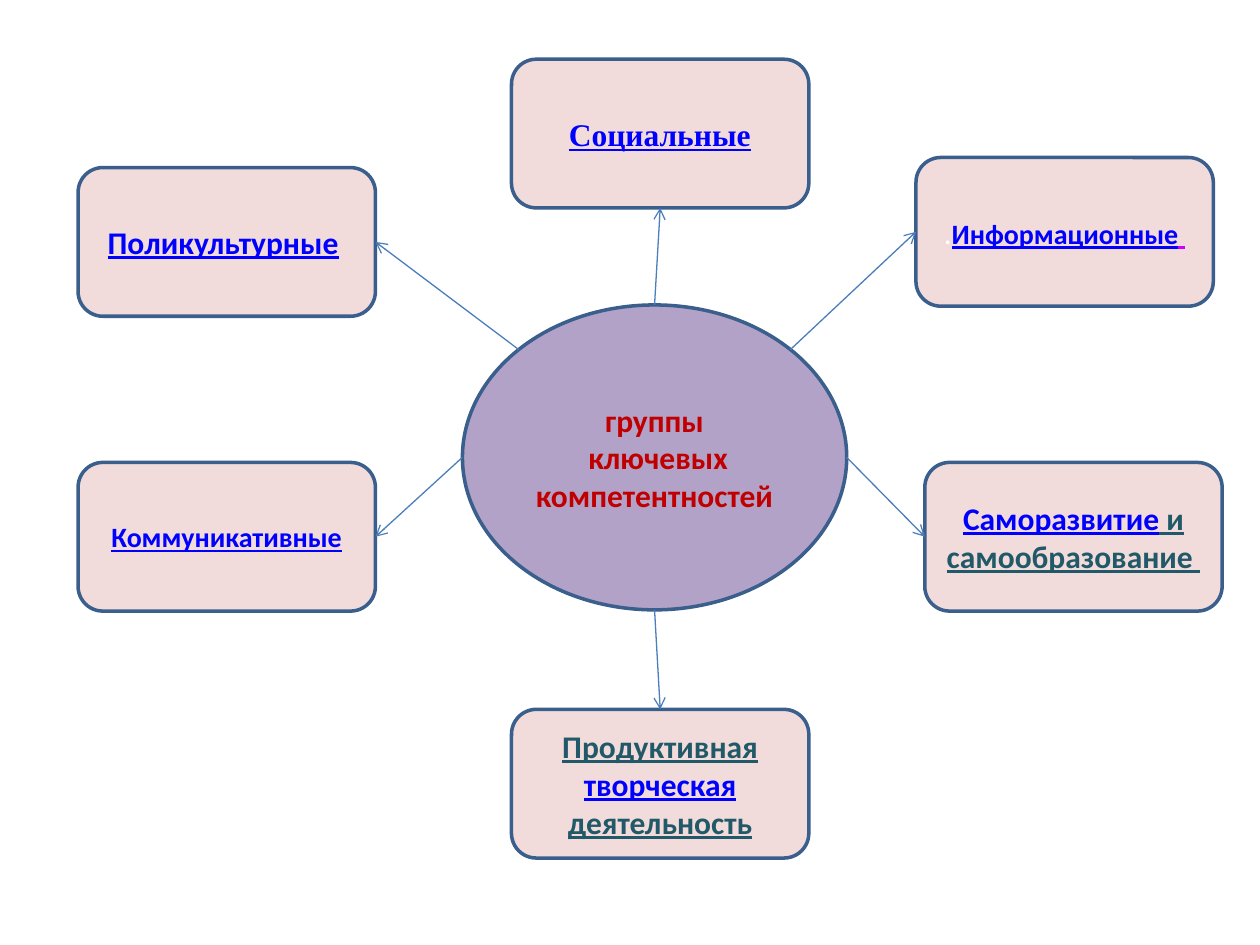
from dataclasses import dataclass
from math import cos, radians, sin

from lxml.etree import SubElement
from pptx import Presentation
from pptx.dml.color import RGBColor
from pptx.enum.shapes import MSO_CONNECTOR, MSO_SHAPE
from pptx.enum.text import MSO_ANCHOR, PP_ALIGN
from pptx.oxml.ns import qn
from pptx.util import Inches, Pt


@dataclass(frozen=True)
class Theme:
    hub_fill: str = "B3A2C7"
    box_fill: str = "F2DCDB"
    outline: str = "3A5F8C"
    arrow: str = "4B7EBC"
    red: str = "C00000"
    blue: str = "0000FF"
    teal: str = "215968"
    magenta: str = "CC00FF"
    white: str = "FFFFFF"
    font: str = "Calibri"
    serif: str = "Times New Roman"
    normal: int = 18
    small: int = 16


THEME = Theme()
BOX_WIDTH, BOX_HEIGHT = 2.36, 1.18
HUB = (3.67, 2.42, 3.05, 2.42)
TOP, LEFT, BOTTOM, RIGHT = range(4)


@dataclass(frozen=True)
class Words:
    text: str
    color: str = THEME.blue
    size: int = THEME.normal
    font: str = THEME.font
    bold: bool = True
    underline: bool = True


# Each group: left, top, joined side, angle on the hub (clockwise from right), paragraphs
GROUPS = [
    (4.06, 0.47, BOTTOM, 270, [[
        Words(" ", THEME.teal, bold=False, underline=False),
        Words("Социальные", font=THEME.serif),
        Words(" ", THEME.teal, font=THEME.serif, bold=False, underline=False)]]),
    (7.27, 1.25, LEFT, 315, [[
        Words(".", THEME.white, bold=False, underline=False),
        Words("Информационные", size=THEME.small),
        Words(" ", THEME.magenta, bold=False)]]),
    (7.34, 3.67, LEFT, 0, [[
        Words("Саморазвитие"), Words(" и самообразование ", THEME.teal)]]),
    (4.06, 5.63, TOP, 90, [
        [Words("Продуктивная ", THEME.teal), Words("творческая")],
        [Words("деятельность", THEME.teal)]]),
    (0.62, 3.67, RIGHT, 180, [[Words("Коммуникативные", size=THEME.small)]]),
    (0.62, 1.33, RIGHT, 225, [[
        Words("Поликультурные"), Words(" ", THEME.teal, underline=False)]]),
]


def add_label(page, preset, bounds, fill, paragraphs):
    """Place an outlined shape with centred text in the given bounds."""
    shape = page.shapes.add_shape(preset, *map(Inches, bounds))
    shape.shadow.inherit = False
    shape.fill.solid()
    shape.fill.fore_color.rgb = RGBColor.from_string(fill)
    shape.line.color.rgb = RGBColor.from_string(THEME.outline)
    shape.line.width = Pt(2)

    frame = shape.text_frame
    frame.word_wrap = True
    frame.vertical_anchor = MSO_ANCHOR.MIDDLE
    for index, pieces in enumerate(paragraphs):
        para = frame.add_paragraph() if index else frame.paragraphs[0]
        para.alignment = PP_ALIGN.CENTER
        for words in pieces:
            span = para.add_run()
            span.text = words.text
            span.font.name = words.font
            span.font.size = Pt(words.size)
            span.font.bold = words.bold
            span.font.underline = words.underline
            span.font.color.rgb = RGBColor.from_string(words.color)
    return shape


def add_arrow(page, hub_bounds, angle, box, side):
    """Draw an arrow from the rim of the hub to the middle of a box side."""
    left, top, width, height = hub_bounds
    start_x = Inches(left + width / 2 * (1 + cos(radians(angle))))
    start_y = Inches(top + height / 2 * (1 + sin(radians(angle))))
    arrow = page.shapes.add_connector(
        MSO_CONNECTOR.STRAIGHT, start_x, start_y, box.left, box.top)
    arrow.end_connect(box, side)
    arrow.line.color.rgb = RGBColor.from_string(THEME.arrow)
    arrow.line.width = Pt(0.75)
    SubElement(arrow.line._get_or_add_ln(), qn("a:tailEnd"), type="arrow")
    SubElement(arrow._element.spPr, qn("a:effectLst"))


def add_competence_map(page, hub_bounds):
    """Place the hub, the boxes around it and the arrows between them."""
    heading = [[Words(text, THEME.red, underline=False)]
               for text in ("группы", " ключевых компетентностей")]
    add_label(page, MSO_SHAPE.OVAL, hub_bounds, THEME.hub_fill, heading)

    for left, top, side, angle, paragraphs in GROUPS:
        bounds = (left, top, BOX_WIDTH, BOX_HEIGHT)
        box = add_label(page, MSO_SHAPE.ROUNDED_RECTANGLE, bounds,
                        THEME.box_fill, paragraphs)
        add_arrow(page, hub_bounds, angle, box, side)


def main():
    deck = Presentation()
    deck.slide_width, deck.slide_height = Inches(10), Inches(7.5)
    page = deck.slides.add_slide(deck.slide_layouts[6])
    add_competence_map(page, HUB)
    deck.save("out.pptx")


if __name__ == "__main__":
    main()
